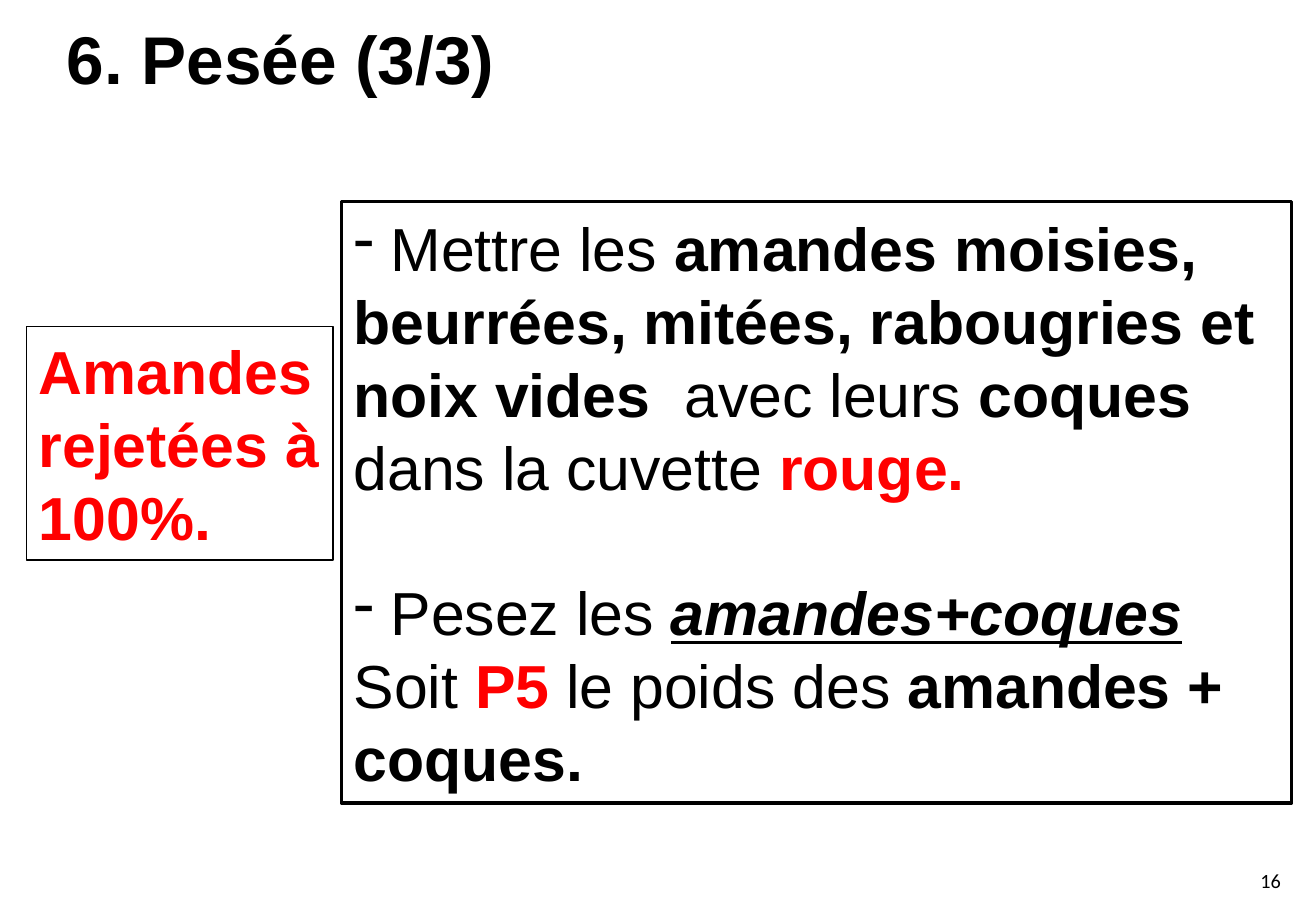
from dataclasses import dataclass

from lxml import etree
from pptx import Presentation
from pptx.dml import color
from pptx.enum import shapes, text
from pptx.oxml import ns
from pptx import util as u

SCALE = 9144
BLACK, WHITE, RED = "000000", "FFFFFF", "FF0000"
MID = text.MSO_ANCHOR.MIDDLE
LEFT, RIGHT = text.PP_ALIGN.LEFT, text.PP_ALIGN.RIGHT


@dataclass(frozen=True)
class Span:
    """A stretch of text in one style."""
    words: str
    bold: bool = False
    tint: str = BLACK
    stress: bool = False


@dataclass(frozen=True)
class Para:
    """A paragraph of spans, with an optional dash and gap above."""
    spans: tuple[Span, ...]
    dash: bool = False
    gap: float = 0
    size: int = 36
    face: str = "Arial"
    align: text.PP_ALIGN = LEFT


@dataclass(frozen=True)
class Box:
    """A place on the slide, in px, with its left and right insets."""
    left: int
    top: int
    width: int
    height: int
    inset: tuple[int, int] = (10, 10)


def px(size: int) -> u.Emu:
    """Turn px into EMU."""
    return u.Emu(size * SCALE)


def rgb(tint: str) -> color.RGBColor:
    """Turn a hex string into a colour."""
    return color.RGBColor.from_string(tint)


def place(shape, box: Box) -> None:
    """Put a shape at its box."""
    shape.left, shape.top = px(box.left), px(box.top)
    shape.width, shape.height = px(box.width), px(box.height)


def edge(shape, width: float) -> None:
    """Give a shape a black outline."""
    shape.line.color.rgb = rgb(BLACK)
    shape.line.width = u.Pt(width)


def mark(para, dash: bool) -> None:
    """Set a dash or no bullet, without indent."""
    props = para._p.get_or_add_pPr()
    props.set("marL", "0")
    props.set("indent", "0")
    if dash:
        etree.SubElement(props, ns.qn("a:buFontTx"))
        etree.SubElement(props, ns.qn("a:buChar")).set("char", "-")
    else:
        etree.SubElement(props, ns.qn("a:buNone"))


def write(shape, box: Box, paras: list[Para]) -> None:
    """Fill a shape with styled paragraphs."""
    frame = shape.text_frame
    frame.word_wrap = True
    frame.auto_size = text.MSO_AUTO_SIZE.NONE
    frame.vertical_anchor = MID
    frame.margin_left, frame.margin_right = map(px, box.inset)
    frame.margin_top = frame.margin_bottom = px(5)
    for num, item in enumerate(paras):
        para = frame.add_paragraph() if num else frame.paragraphs[0]
        mark(para, item.dash)
        para.alignment = item.align
        para.line_spacing = u.Pt(item.size * 1.2)
        para.space_before = u.Pt(item.gap)
        para.space_after = u.Pt(0)
        for span in item.spans:
            run = para.add_run()
            run.text = span.words
            font = run.font
            font.name, font.size = item.face, u.Pt(item.size)
            font.bold, font.italic = span.bold, span.stress
            font.underline = span.stress
            font.color.rgb = rgb(span.tint)


TITLE = Box(27, 12, 960, 71, (28, 21))
LABEL = Box(22, 269, 252, 192)
STEPS = Box(281, 166, 782, 495)
PAGE = Box(996, 707, 68, 35)

LIST = [
    Para((
        Span(" Mettre les "),
        Span("amandes moisies, beurrées, mitées, rabougries et noix vides  ", True),
        Span("avec leurs "),
        Span("coques ", True),
        Span("dans la cuvette "),
        Span("rouge.", True, RED),
    ), dash=True),
    Para((
        Span(" Pesez les "),
        Span("amandes+coques", True, stress=True),
    ), dash=True, gap=43.2),
    Para((
        Span("Soit "),
        Span("P5 ", True, RED),
        Span("le poids des "),
        Span("amandes + coques.", True),
    )),
]


def main() -> None:
    """Build the slide and save it."""
    deck = Presentation()
    deck.slide_width, deck.slide_height = px(1083), px(750)
    slide = deck.slides.add_slide(deck.slide_layouts[1])

    title = slide.shapes.title
    place(title, TITLE)
    write(title, TITLE, [Para((Span("6. Pesée (3/3)", True),), size=40)])

    steps = slide.placeholders[1]
    place(steps, STEPS)
    steps.fill.solid()
    steps.fill.fore_color.rgb = rgb(WHITE)
    edge(steps, 2)
    write(steps, STEPS, LIST)

    label = slide.shapes.add_shape(shapes.MSO_SHAPE.RECTANGLE, 0, 0, 0, 0)
    place(label, LABEL)
    label.shadow.inherit = False
    label.fill.background()
    edge(label, 0.75)
    write(label, LABEL, [Para((Span("Amandes rejetées à 100%.", True, RED),))])

    page = slide.shapes.add_textbox(0, 0, 0, 0)
    place(page, PAGE)
    write(page, PAGE, [Para((Span("16"),), size=12, face="Calibri", align=RIGHT)])

    deck.save("out.pptx")


if __name__ == "__main__":
    main()
